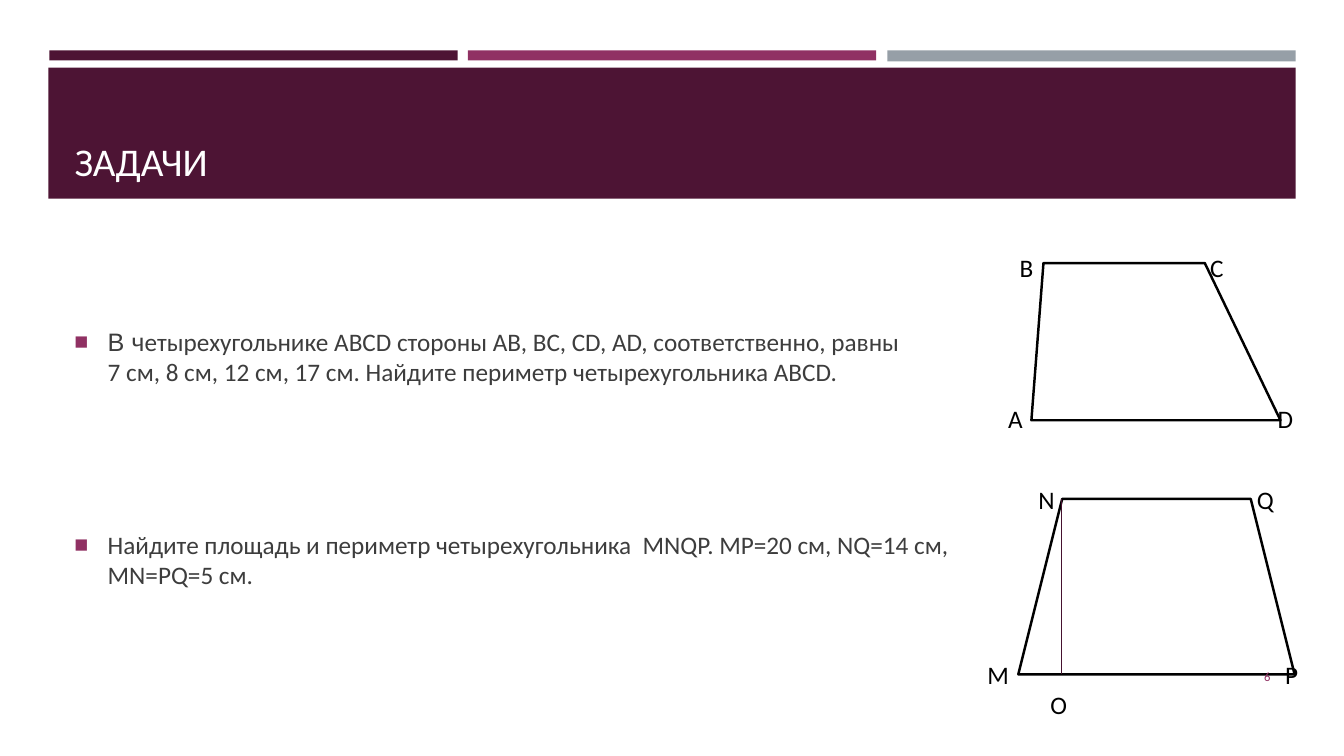
from pptx import Presentation
from pptx.dml.color import RGBColor
from pptx.enum.shapes import MSO_CONNECTOR as Connector, MSO_SHAPE as Preset
from pptx.enum.text import MSO_ANCHOR as Anchor, PP_ALIGN as Align
from pptx.oxml.ns import qn
from pptx.util import Pt
from lxml.etree import SubElement

PX = 9144
COLORS = {
    "plum": "4D1434", "berry": "903163", "steel": "969FA7", "white": "FFFFFF",
    "ink": "3D3D3D", "black": "000000", "height": "45122F",
}
BANDS = [
    ((49, 50, 405, 10), "plum"),
    ((464, 50, 405, 10), "berry"),
    ((880, 50, 405, 11), "steel"),
    ((48, 67, 1237, 130), "plum"),
]
TITLE = "ЗАДАЧИ"
TITLE_BOX = (64, 77, 1206, 111)
TASKS = [
    [("В ч", "Arial"),
     ("етырехугольнике ABCD стороны AB, BC, CD, AD, соответственно, равны\v"
      "7 см, 8 см, 12 см, 17 см. Найдите периметр четырехугольника ABCD.", "Calibri")],
    [("Найдите площадь и периметр четырехугольника  MNQP. MP=20 см, NQ=14 см, \v"
      "MN=PQ=5 см.", "Calibri")],
]
TASKS_BOX = (64, 239, 1206, 431)
TASK_GAP = 96
INDENT = 33
ABCD = [(1023, 417), (1035, 261), (1195, 261), (1270, 417)]
MNQP_BOX = (1010, 495, 274, 174)
HEIGHT_X = 1053
VERTICES = {
    "B": (1018, 265), "C": (1207, 265), "A": (1007, 415), "D": (1275, 415),
    "N": (1038, 496), "Q": (1255, 496), "M": (990, 669), "P": (1281, 669),
    "O": (1050, 699),
}
LABEL_SIZE = 40
PAGE = "6"
PAGE_BOX = (1155, 651, 115, 40)


def emu(lengths):
    return [length * PX for length in lengths]


def rgb(color):
    return RGBColor.from_string(COLORS[color])


def add_run(paragraph, words, size, color, font="Calibri"):
    for number, line in enumerate(words.split("\v")):
        if number:
            paragraph.add_line_break()
        run = paragraph.add_run()
        run.text = line
        run.font.size = Pt(size)
        run.font.name = font
        run.font.color.rgb = rgb(color)


def add_box(box, anchor=Anchor.MIDDLE):
    frame = slide.shapes.add_textbox(*emu(box)).text_frame
    frame.word_wrap = True
    frame.vertical_anchor = anchor
    return frame


def paint(shape, fill, line=None):
    shape.shadow.inherit = False
    shape.fill.solid()
    shape.fill.fore_color.rgb = rgb(fill)
    if line:
        shape.line.color.rgb = rgb(line)
        shape.line.width = Pt(1.75)
    else:
        shape.line.fill.background()


def add_bullet(paragraph):
    props = paragraph._p.get_or_add_pPr()
    props.set("marL", str(INDENT * PX))
    props.set("indent", str(-INDENT * PX))
    SubElement(SubElement(props, qn("a:buClr")), qn("a:srgbClr"), val=COLORS["berry"])
    SubElement(props, qn("a:buSzPct"), val="92000")
    SubElement(props, qn("a:buFont"), typeface="Arial")
    SubElement(props, qn("a:buChar"), char="■")


deck = Presentation()
deck.slide_width, deck.slide_height = emu((1333, 750))
slide = deck.slides.add_slide(deck.slide_layouts[5])

title = slide.shapes.title
title.left, title.top, title.width, title.height = emu(TITLE_BOX)
title.text_frame.vertical_anchor = Anchor.BOTTOM
heading = title.text_frame.paragraphs[0]
heading.alignment = Align.LEFT
add_run(heading, TITLE, 28, "white")

for box, color in BANDS:
    paint(slide.shapes.add_shape(Preset.RECTANGLE, *emu(box)), color)
slide.shapes._spTree.append(title._element)

tasks = add_box(TASKS_BOX)
for number, task in enumerate(TASKS):
    paragraph = tasks.add_paragraph() if number else tasks.paragraphs[0]
    paragraph.space_before = Pt(TASK_GAP if number else 0)
    paragraph.space_after = Pt(6)
    add_bullet(paragraph)
    for words, font in task:
        add_run(paragraph, words, 18, "ink", font)

outline = slide.shapes.build_freeform(*ABCD[0], scale=PX)
outline.add_line_segments(ABCD[1:], close=True)
paint(outline.convert_to_shape(), "white", "black")

paint(slide.shapes.add_shape(Preset.TRAPEZOID, *emu(MNQP_BOX)), "white", "black")
top, bottom = MNQP_BOX[1], MNQP_BOX[1] + MNQP_BOX[3]
height = slide.shapes.add_connector(
    Connector.STRAIGHT, *emu((HEIGHT_X, top, HEIGHT_X, bottom)))
height.line.color.rgb = rgb("height")
height.line.width = Pt(1)
SubElement(height._element.spPr, qn("a:effectLst"))

for letter, (x, y) in VERTICES.items():
    half = LABEL_SIZE // 2
    label = add_box((x - half, y - half, LABEL_SIZE, LABEL_SIZE))
    label.margin_left = label.margin_right = 0
    label.paragraphs[0].alignment = Align.CENTER
    add_run(label.paragraphs[0], letter, 18, "black")

page = add_box(PAGE_BOX).paragraphs[0]
page.alignment = Align.RIGHT
add_run(page, PAGE, 9, "berry")

deck.save("out.pptx")
